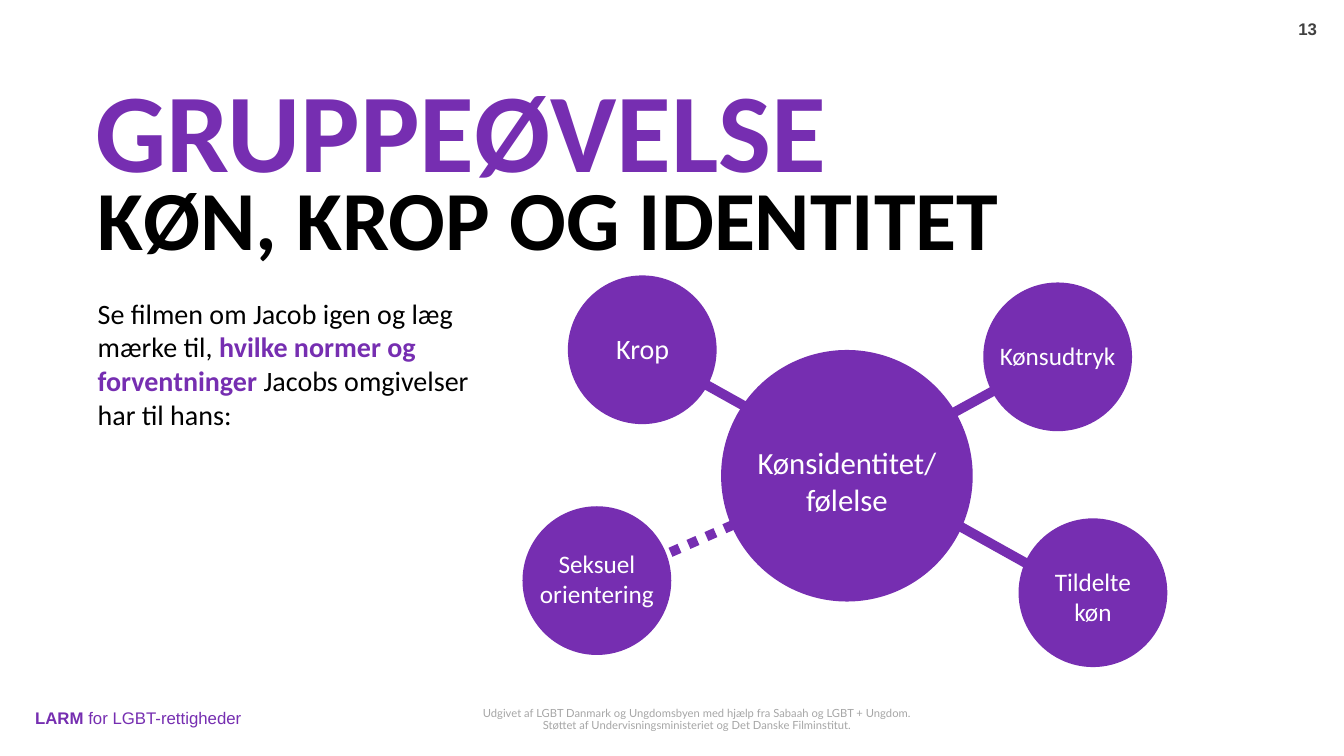
from dataclasses import dataclass
from lxml.etree import SubElement as Sub
from pptx import Presentation
from pptx.dml.color import RGBColor as Color
from pptx.enum.dml import MSO_LINE as Dash
from pptx.enum.shapes import MSO_CONNECTOR as Link, MSO_SHAPE as Form
from pptx.enum.text import MSO_ANCHOR as Anchor, PP_ALIGN as Align
from pptx.oxml.ns import qn
from pptx.util import Inches, Pt


@dataclass(frozen=True)
class Theme:
    purple: Color = Color.from_string("762EB1")
    black: Color = Color.from_string("000000")
    white: Color = Color.from_string("FFFFFF")
    dark: Color = Color.from_string("404040")
    grey: Color = Color.from_string("A6A6A6")
    title: int = 80
    sub: int = 60
    hub: int = 22
    body: int = 20
    label: int = 18
    small: int = 12
    note: int = 8


theme = Theme()
deck = Presentation()
deck.slide_width, deck.slide_height = Inches(13.33), Inches(7.5)
slide = deck.slides.add_slide(deck.slide_layouts[6])
shapes = slide.shapes


def write(text, at, size, color, font="Calibri", bold=False, strong=None,
          align=Align.LEFT, anchor=Anchor.TOP, space=1.0):
    frame = shapes.add_textbox(*map(Inches, at)).text_frame
    frame.word_wrap = True
    frame.vertical_anchor = anchor
    for row, line in enumerate(text.split("\n")):
        para = frame.add_paragraph() if row else frame.paragraphs[0]
        para.alignment = align
        para.line_spacing = space
        for part, chunk in enumerate(line.split("*")):
            marked = part % 2 == 1
            for turn, piece in enumerate(chunk.split("\v")):
                if turn:
                    para.add_line_break()
                if not piece:
                    continue
                run = para.add_run()
                run.text = piece
                run.font.name = font
                run.font.size = Pt(size)
                run.font.bold = bold or marked
                run.font.color.rgb = strong if marked and strong else color


write("Udgivet af LGBT Danmark og Ungdomsbyen med hjælp fra Sabaah og LGBT + Ungdom.\v"
      "Støttet af Undervisningsministeriet og Det Danske Filminstitut.",
      (0.5, 6.97, 12.83, 0.5), theme.note, theme.grey, font="Lato",
      align=Align.CENTER, space=0.9)
write("*LARM* for LGBT-rettigheder", (0.25, 7.02, 6.72, 0.23), theme.small,
      theme.purple, font="Arial", anchor=Anchor.MIDDLE, space=0.9)
write("13", (6.44, 0.18, 6.72, 0.23), theme.small, theme.dark, font="Arial",
      bold=True, align=Align.RIGHT, anchor=Anchor.MIDDLE, space=0.9)

spokes = [
    ((7.63, 5.05, 6.42, 5.58), Dash.ROUND_DOT),
    ((6.31, 3.43, 10.45, 5.74), Dash.SOLID),
    ((10.27, 3.65, 8.79, 4.46), Dash.SOLID),
]
for ends, dash in spokes:
    spoke = shapes.add_connector(Link.STRAIGHT, *map(Inches, ends))
    spoke.line.color.rgb = theme.purple
    spoke.line.width = Pt(7)
    spoke.line.dash_style = dash
    Sub(spoke._element.spPr, qn("a:effectLst"))

write("GRUPPEØVELSE", (0.85, 0.55, 10.87, 1.45), theme.title, theme.purple, bold=True)
write("KØN, KROP OG IDENTITET", (0.87, 1.6, 10.87, 1.11), theme.sub, theme.black, bold=True)
write("Se filmen om Jacob igen og læg mærke til, *hvilke normer og forventninger *"
      "Jacobs omgivelser har til hans:", (0.87, 2.89, 3.95, 1.45), theme.body,
      theme.black, strong=theme.purple)

nodes = [
    ("Seksuel\norientering", 5.21, 5.05, 1.42, (4.71, 5.39, 2.42, 0.71), theme.label),
    ("Tildelte\nkøn", 10.13, 5.17, 1.42, (10.13, 5.57, 1.42, 0.71), theme.label),
    ("Kønsudtryk", 9.78, 2.83, 1.42, (9.78, 3.33, 1.42, 0.4), theme.label),
    ("Krop", 5.66, 2.76, 1.42, (5.71, 3.24, 1.33, 0.44), theme.body),
    ("Kønsidentitet/\nfølelse", 7.18, 3.5, 2.44, (7.17, 4.35, 2.46, 0.84), theme.hub),
]
for text, left, top, wide, at, size in nodes:
    disc = shapes.add_shape(Form.OVAL, *map(Inches, (left, top, wide, wide)))
    disc.shadow.inherit = False
    disc.fill.solid()
    disc.fill.fore_color.rgb = theme.purple
    disc.line.color.rgb = theme.purple
    disc.line.width = Pt(4)
    write(text, at, size, theme.white, align=Align.CENTER)

deck.save("out.pptx")
